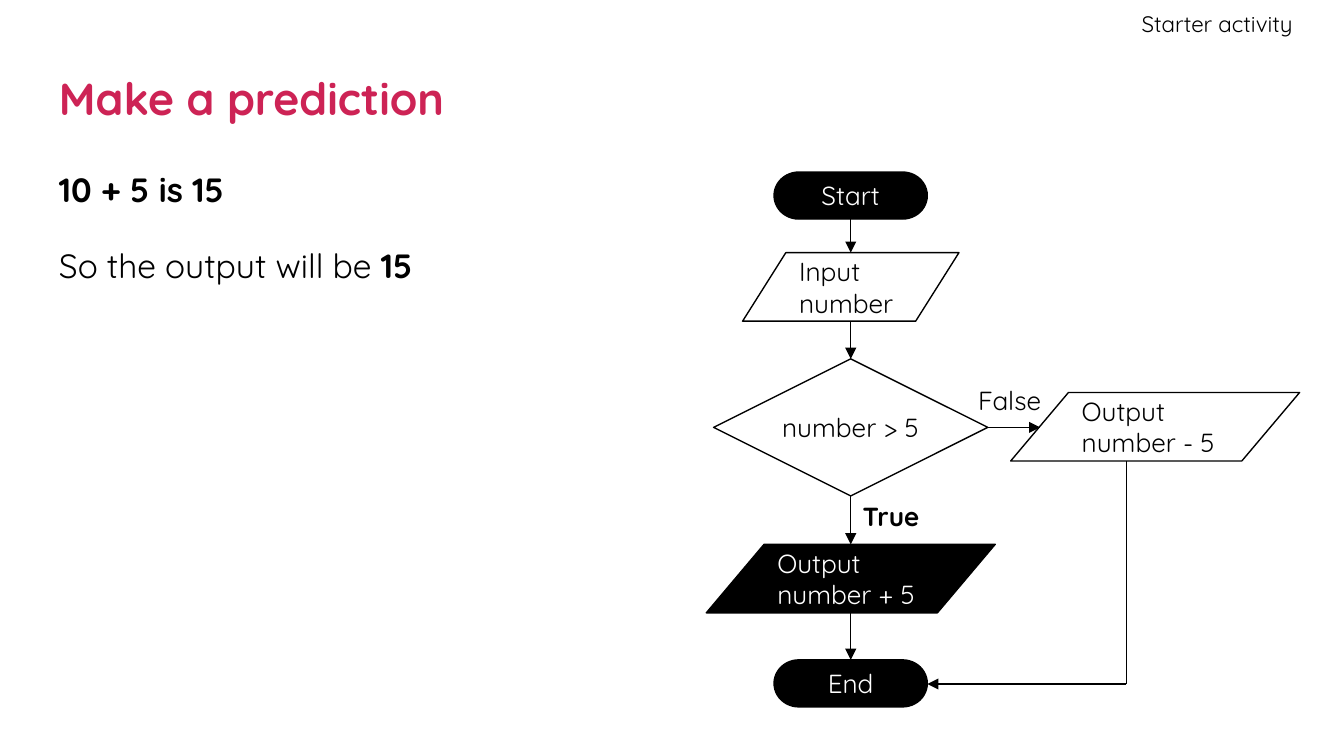
import pptx
import pptx.util
import pptx.dml.color
import pptx.enum.shapes
import pptx.enum.text
import pptx.oxml.ns
import lxml.etree
from dataclasses import dataclass

Inches = pptx.util.Inches
Pt = pptx.util.Pt
Kind = pptx.enum.shapes.MSO_SHAPE
Align = pptx.enum.text.PP_ALIGN
Anchor = pptx.enum.text.MSO_ANCHOR


@dataclass(frozen=True)
class Theme:
    font: str = "Quicksand"
    ink: str = "000000"
    paper: str = "FFFFFF"
    accent: str = "CD2355"
    title: int = 24
    body: int = 18
    label: int = 14
    note: int = 12
    line: float = 0.75


def color(code):
    return pptx.dml.color.RGBColor.from_string(code)


def write(frame, text, font, size, ink, bold=False, align=Align.LEFT,
          anchor=Anchor.TOP, inset=(0.1, 0.1, 0.1, 0.1), space=None, gap=0):
    """Fill a frame; text is a string or a list of paragraphs of (text, bold)."""
    frame.word_wrap = True
    frame.vertical_anchor = anchor
    (frame.margin_left, frame.margin_top,
     frame.margin_right, frame.margin_bottom) = map(Inches, inset)
    rows = [[(text, bold)]] if isinstance(text, str) else text
    for i, row in enumerate(rows):
        para = frame.add_paragraph() if i else frame.paragraphs[0]
        para.alignment = align
        if space:
            para.line_spacing = space
        if i and gap:
            para.space_before = Pt(gap)
        for part, heavy in row:
            run = para.add_run()
            run.text = part
            run.font.name = font
            run.font.size = Pt(size)
            run.font.bold = heavy
            run.font.color.rgb = color(ink)


class Sheet:
    def __init__(self, slide, theme):
        self.slide = slide
        self.theme = theme

    def text(self, box, text, size, ink=None, **form):
        shape = self.slide.shapes.add_textbox(*map(Inches, box))
        write(shape.text_frame, text, self.theme.font, size,
              ink or self.theme.ink, **form)

    def node(self, kind, box, text, dark=False, **form):
        theme = self.theme
        shape = self.slide.shapes.add_shape(kind, *map(Inches, box))
        shape.shadow.inherit = False
        if dark:
            shape.fill.solid()
            shape.fill.fore_color.rgb = color(theme.ink)
        else:
            shape.fill.background()
        shape.line.color.rgb = color(theme.ink)
        shape.line.width = Pt(theme.line)
        write(shape.text_frame, text, theme.font, theme.label,
              theme.paper if dark else theme.ink, anchor=Anchor.MIDDLE, **form)

    def link(self, start, end, arrow=True):
        line = self.slide.shapes.add_connector(
            pptx.enum.shapes.MSO_CONNECTOR.STRAIGHT,
            *map(Inches, (*start, *end)))
        line.line.color.rgb = color(self.theme.ink)
        line.line.width = Pt(self.theme.line)
        tag = pptx.oxml.ns.qn
        if arrow:
            lxml.etree.SubElement(line.line._get_or_add_ln(),
                                  tag("a:tailEnd"), type="triangle")
        lxml.etree.SubElement(line._element.spPr, tag("a:effectLst"))


def main():
    deck = pptx.Presentation()
    deck.slide_width = Inches(10)
    deck.slide_height = Inches(10 * 9 / 16)
    theme = Theme()
    sheet = Sheet(deck.slides.add_slide(deck.slide_layouts[6]), theme)

    sheet.text((0.34, 0.34, 9.32, 0.77), "Make a prediction", theme.title,
               theme.accent, bold=True, anchor=Anchor.MIDDLE)
    sheet.text((7.48, 0, 2.14, 0.35), "Starter activity", theme.note,
               align=Align.RIGHT, anchor=Anchor.MIDDLE,
               inset=(0.1, 0.1, 0, 0.1))
    sheet.text((0.34, 1.11, 4.48, 4),
               [[("10 + 5 is 15", True)],
                [("So the output will be ", False), ("15", True)]],
               theme.body, space=1.15, gap=16)

    # Main column: kind, top, width, height, text, dark, format
    axis = 6.33
    ends = {"align": Align.CENTER}
    flow = [
        (Kind.FLOWCHART_TERMINATOR, 1.28, 1.14, 0.35, "Start", True, ends),
        (Kind.FLOWCHART_DATA, 1.88, 1.61, 0.51, "Input number", False, {}),
        (Kind.FLOWCHART_DECISION, 2.67, 2.04, 1.02, "number > 5", False,
         {"inset": (0, 0, 0, 0)}),
        (Kind.FLOWCHART_DATA, 4.05, 2.15, 0.51, "Output number + 5", True, {}),
        (Kind.FLOWCHART_TERMINATOR, 4.91, 1.14, 0.35, "End", True, ends),
    ]
    for kind, top, wide, high, text, dark, form in flow:
        sheet.node(kind, (axis - wide / 2, top, wide, high), text, dark, **form)
    for above, below in zip(flow, flow[1:]):
        sheet.link((axis, above[1] + above[3]), (axis, below[1]))

    # False branch
    side, mid, base = 8.38, 3.18, 5.09
    sheet.node(Kind.FLOWCHART_DATA, (7.52, 2.92, 2.15, 0.51),
               "Output number - 5")
    sheet.link((7.35, mid), (7.74, mid))
    sheet.link((side, 3.43), (side, base), arrow=False)
    sheet.link((side, base), (6.9, base))

    for left, top, text, bold in ((6.32, 3.62, "True", True),
                                  (7.18, 2.76, "False", False)):
        sheet.text((left, top, 0.72, 0.42), text, theme.label, bold=bold)

    deck.save("out.pptx")


if __name__ == "__main__":
    main()
